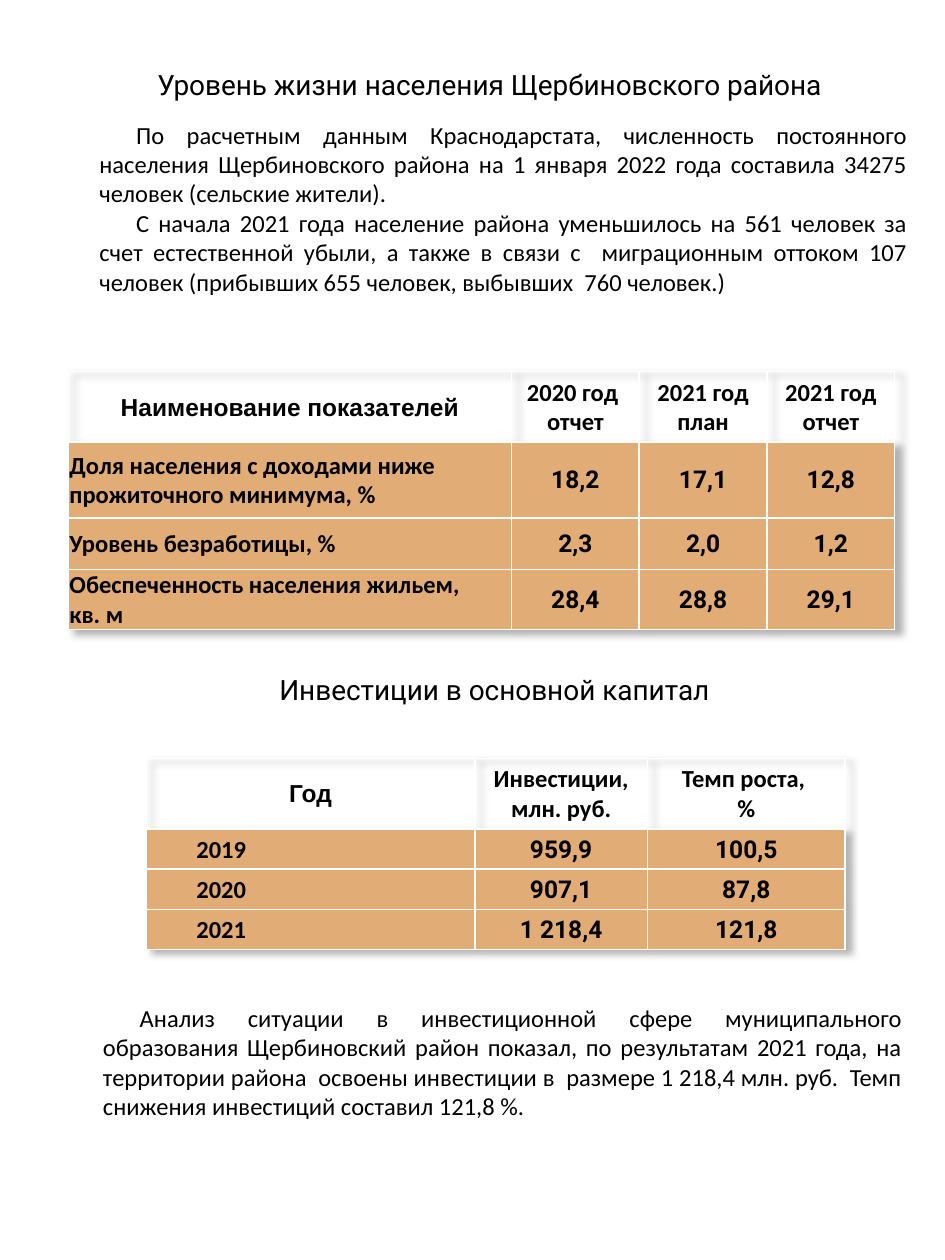
"""Build a slide on living standards and investment in a rural district."""
import dataclasses
import typing

import lxml.etree
import pptx
import pptx.dml.color
import pptx.enum.text
import pptx.oxml
import pptx.oxml.ns
import pptx.util

Pt = pptx.util.Pt
Align = pptx.enum.text.PP_ALIGN
qn = pptx.oxml.ns.qn


@dataclasses.dataclass(frozen=True)
class Theme:
    ink: str = "000000"
    sand: str = "E2AC76"
    line: str = "FFFFFF"
    shade: str = "808080"
    title: float = 16
    body: float = 14
    head: str = "Arial"
    text: str = "Calibri"
    digits: str = "Roboto"


THEME = Theme()


class Block(typing.NamedTuple):
    left: float
    top: float
    width: float
    height: float
    lines: list[str]
    title: bool = False


class Grid(typing.NamedTuple):
    left: float
    top: float
    widths: list[float]
    heights: list[float]
    rows: list[list[str]]
    indent: int = 0


BLOCKS = [
    Block(41.8, 35.3, 476, 26.6, ["Уровень жизни населения Щербиновского района"], True),
    Block(49.7, 64.8, 476, 109.4, [
        "По расчетным данным Краснодарстата, численность постоянного населения "
        "Щербиновского района на 1 января 2022 года составила 34275 человек (сельские жители).",
        "С начала 2021 года население района уменьшилось на 561 человек за счет "
        "естественной убыли, а также в связи с  миграционным оттоком 107 человек "
        "(прибывших 655 человек, выбывших  760 человек.)",
    ]),
    Block(44.6, 380.9, 476, 26.6, ["Инвестиции в основной капитал"], True),
    Block(51.8, 569.5, 471, 75, [
        "Анализ ситуации в инвестиционной сфере муниципального образования "
        "Щербиновский район показал, по результатам 2021 года, на территории района  "
        "освоены инвестиции в  размере 1 218,4 млн. руб.  Темп снижения инвестиций "
        "составил 121,8 %.",
    ]),
]

GRIDS = [
    Grid(39, 212.4, [253.3, 73, 73, 73], [40.3, 43.2, 29.5, 33.8], [
        ["Наименование показателей", "2020 год \nотчет", "2021 год\nплан", "2021 год\nотчет"],
        ["Доля населения с доходами ниже прожиточного минимума, %", "18,2", "17,1", "12,8"],
        ["Уровень безработицы, %", "2,3", "2,0", "1,2"],
        ["Обеспеченность населения жильем, \nкв. м", "28,4", "28,8", "29,1"],
    ]),
    Grid(83.5, 433.4, [187.9, 98.6, 113], [40.3, 23, 23, 23], [
        ["Год", "Инвестиции, млн. руб.", "Темп роста, \n%"],
        ["2019", "959,9", "100,5"],
        ["2020", "907,1", "87,8"],
        ["2021", "1 218,4", "121,8"],
    ], 28),
]


def apply(thing: typing.Any, format: dict[str, typing.Any]) -> None:
    for name, value in format.items():
        setattr(thing, name, value)


def write(para, text: str, face: str, size: float, bold: bool, align) -> None:
    para.text = text
    para.alignment = align
    for run in para.runs:
        apply(run.font, {"name": face, "size": Pt(size), "bold": bold})
        run.font.color.rgb = pptx.dml.color.RGBColor.from_string(THEME.ink)
    for gap in para._p.findall(qn("a:br")):
        lxml.etree.SubElement(gap, qn("a:rPr"), sz=str(int(size * 100)))


def indent(para, left: float, first: float) -> None:
    props = para._p.get_or_add_pPr()
    props.set("marL", str(Pt(left)))
    props.set("indent", str(Pt(first)))


def draw_block(slide, block: Block) -> None:
    box = slide.shapes.add_textbox(*map(Pt, block[:4]))
    frame = box.text_frame
    apply(frame, {"word_wrap": True,
                  "auto_size": pptx.enum.text.MSO_AUTO_SIZE.SHAPE_TO_FIT_TEXT})
    for index, line in enumerate(block.lines):
        para = frame.add_paragraph() if index else frame.paragraphs[0]
        if block.title:
            write(para, line, THEME.digits, THEME.title, False, Align.CENTER)
        else:
            write(para, line, THEME.text, THEME.body, False, Align.JUSTIFY)
            indent(para, 0, 21)


def edge(cell) -> None:
    props = cell._tc.get_or_add_tcPr()
    for index, side in enumerate(("lnL", "lnR", "lnT", "lnB")):
        props.insert(index, pptx.oxml.parse_xml(
            f'<a:{side} {pptx.oxml.ns.nsdecls("a")} w="{Pt(1)}"><a:solidFill>'
            f'<a:srgbClr val="{THEME.line}"/></a:solidFill></a:{side}>'))


def shade(table) -> None:
    props = table._tbl.tblPr
    for child in list(props):
        props.remove(child)
    props.append(pptx.oxml.parse_xml(
        f'<a:effectLst {pptx.oxml.ns.nsdecls("a")}><a:outerShdw blurRad="{Pt(4)}" '
        f'dist="{Pt(4)}" dir="1800000" algn="tl"><a:srgbClr val="{THEME.shade}">'
        '<a:alpha val="60000"/></a:srgbClr></a:outerShdw></a:effectLst>'))


def draw_cell(cell, text: str, row: int, col: int, inset: float) -> None:
    apply(cell, {"margin_left": Pt(0.7), "margin_right": Pt(0.7),
                 "margin_top": Pt(0.7), "margin_bottom": 0,
                 "vertical_anchor": pptx.enum.text.MSO_ANCHOR.MIDDLE})
    label = row > 0 and col == 0
    if row == 0:
        face = THEME.text if col else THEME.head
        cell.fill.background()
    else:
        face = THEME.digits if col else THEME.text
        cell.fill.solid()
        cell.fill.fore_color.rgb = pptx.dml.color.RGBColor.from_string(THEME.sand)
    para = cell.text_frame.paragraphs[0]
    write(para, text, face, THEME.body, True, Align.LEFT if label else Align.CENTER)
    if label:
        indent(para, inset, 0)
    edge(cell)


def draw_grid(slide, grid: Grid) -> None:
    size = sum(grid.widths), sum(grid.heights)
    table = slide.shapes.add_table(len(grid.heights), len(grid.widths),
                                   *map(Pt, (grid.left, grid.top, *size))).table
    apply(table, {"first_row": False, "horz_banding": False})
    shade(table)
    for part, width in zip(table.columns, grid.widths):
        part.width = Pt(width)
    for part, height in zip(table.rows, grid.heights):
        part.height = Pt(height)
    for row, texts in enumerate(grid.rows):
        for col, text in enumerate(texts):
            draw_cell(table.cell(row, col), text, row, col, grid.indent)


def main() -> None:
    deck = pptx.Presentation()
    apply(deck, {"slide_width": Pt(540), "slide_height": Pt(720)})
    slide = deck.slides.add_slide(deck.slide_layouts[6])
    for block in BLOCKS:
        draw_block(slide, block)
    for grid in GRIDS:
        draw_grid(slide, grid)
    deck.save("out.pptx")


if __name__ == "__main__":
    main()
